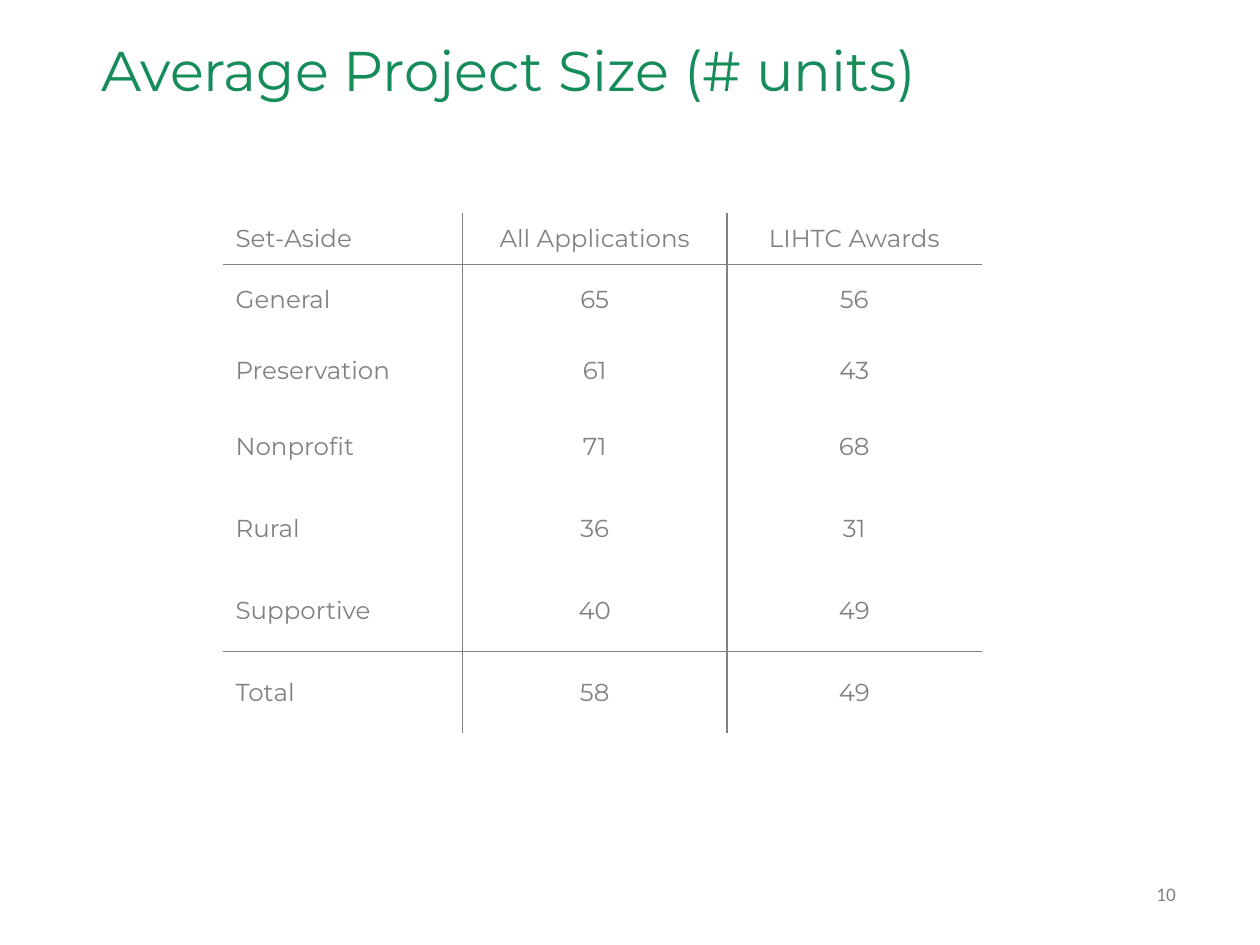
import lxml.etree
import pptx
import pptx.dml.color
import pptx.enum.text
import pptx.oxml.ns
import pptx.util

Inches = pptx.util.Inches
Pt = pptx.util.Pt
Align = pptx.enum.text.PP_ALIGN
Anchor = pptx.enum.text.MSO_ANCHOR
qn = pptx.oxml.ns.qn


def color(hex_string):
    return pptx.dml.color.RGBColor.from_string(hex_string)


class Deck:
    GREEN = "158C59"
    GRAY = "808184"
    FONT = "Montserrat"
    NUMBER_FONT = "Calibri"
    RULE_WIDTH = Pt(1)

    def __init__(self, slide):
        self.slide = slide

    def add_run(self, paragraph, text, size, ink, font):
        run = paragraph.add_run()
        run.text = text
        run.font.size = Pt(size)
        run.font.name = font
        run.font.color.rgb = color(ink)

    def add_text(self, box, text, size, ink, font, wrap=True, line_spacing=None):
        frame = self.slide.shapes.add_textbox(*map(Inches, box)).text_frame
        frame.word_wrap = wrap
        paragraph = frame.paragraphs[0]
        paragraph.line_spacing = line_spacing
        self.add_run(paragraph, text, size, ink, font)

    def set_borders(self, cell, ruled_sides):
        """Rule the given sides (letters of LRTB) and clear the others."""
        properties = cell._tc.get_or_add_tcPr()
        for position, side in enumerate("LRTB"):
            line = lxml.etree.Element(qn(f"a:ln{side}"), w=str(self.RULE_WIDTH))
            if side in ruled_sides:
                fill = lxml.etree.SubElement(line, qn("a:solidFill"))
                lxml.etree.SubElement(fill, qn("a:srgbClr"), val=self.GRAY)
            else:
                lxml.etree.SubElement(line, qn("a:noFill"))
            properties.insert(position, line)

    def add_table(self, left, top, widths, heights, rows):
        """Add a table ruled between columns, below the header and above the total."""
        table = self.slide.shapes.add_table(
            len(rows), len(widths), Inches(left), Inches(top),
            Inches(sum(widths)), Inches(sum(heights))).table
        table.first_row = table.horz_banding = False
        for column, width in zip(table.columns, widths):
            column.width = Inches(width)
        for row, height in zip(table.rows, heights):
            row.height = Inches(height)

        last_row, last_column = len(rows) - 1, len(widths) - 1
        for r, values in enumerate(rows):
            for c, value in enumerate(values):
                cell = table.cell(r, c)
                cell.fill.background()
                cell.vertical_anchor = Anchor.MIDDLE
                paragraph = cell.text_frame.paragraphs[0]
                paragraph.alignment = Align.CENTER if c else Align.LEFT
                self.add_run(paragraph, str(value), 14, self.GRAY, self.FONT)
                ruled = {"L": c > 0, "R": c < last_column,
                         "T": r in (1, last_row), "B": r in (0, last_row - 1)}
                self.set_borders(cell, [side for side in ruled if ruled[side]])


def main():
    presentation = pptx.Presentation()
    presentation.slide_width = Inches(10)
    presentation.slide_height = Inches(7.5)
    deck = Deck(presentation.slides.add_slide(presentation.slide_layouts[6]))

    deck.add_text((9.08, 6.95, 0.38, 0.29), "10", 11, deck.GRAY,
                  deck.NUMBER_FONT, wrap=False)
    deck.add_text((0.71, 0.29, 8.39, 1.11), "Average Project Size (# units)",
                  32, deck.GREEN, deck.FONT, line_spacing=0.9)

    project_sizes = [
        ("Set-Aside", "All Applications", "LIHTC Awards"),
        ("General", 65, 56),
        ("Preservation", 61, 43),
        ("Nonprofit", 71, 68),
        ("Rural", 36, 31),
        ("Supportive", 40, 49),
        ("Total", 58, 49),
    ]
    deck.add_table(1.77, 1.69, widths=[1.9, 2.1, 2.02],
                   heights=[0.41] + [0.56] * 2 + [0.65] * 4, rows=project_sizes)

    presentation.save("out.pptx")


if __name__ == "__main__":
    main()
